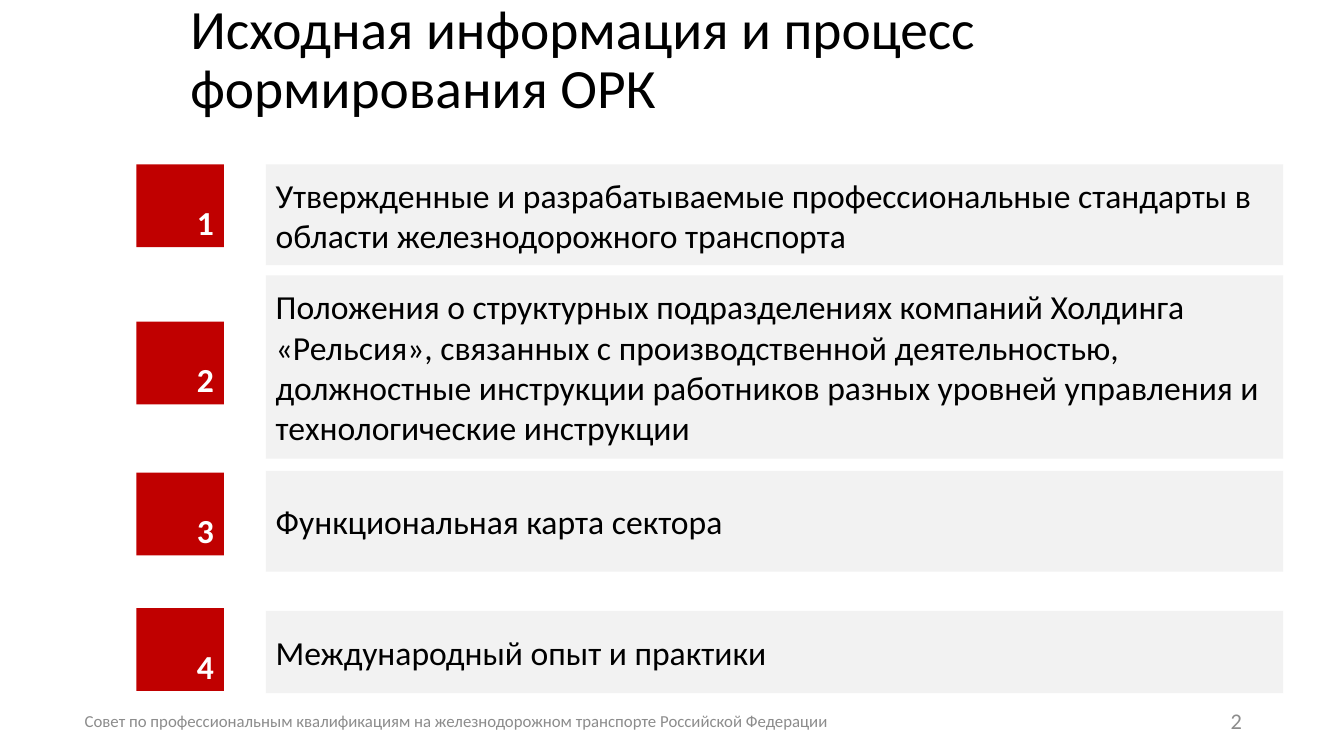
from pptx import Presentation
from pptx.dml.color import RGBColor
from pptx.enum.shapes import MSO_SHAPE
from pptx.enum.text import MSO_ANCHOR, PP_ALIGN
from pptx.util import Pt

RECTANGLE = MSO_SHAPE.RECTANGLE
MIDDLE, BOTTOM = MSO_ANCHOR.MIDDLE, MSO_ANCHOR.BOTTOM
LEFT, CENTER, RIGHT = PP_ALIGN.LEFT, PP_ALIGN.CENTER, PP_ALIGN.RIGHT

BLACK = RGBColor(0x00, 0x00, 0x00)
WHITE = RGBColor(0xFF, 0xFF, 0xFF)
RED = RGBColor(0xC0, 0x00, 0x00)
PANEL_GRAY = RGBColor(0xF2, 0xF2, 0xF2)
FOOTER_GRAY = RGBColor(0x8C, 0x8C, 0x8C)

FONT = "Calibri"
BADGE_WIDTH, BADGE_HEIGHT = 62.6, 59.2
PANEL_OFFSET = 92.5

SOURCES = [
    (117.4, 72, 0,
     "Утвержденные и разрабатываемые профессиональные стандарты в "
     "области железнодорожного транспорта"),
    (196.6, 131, 33.1,
     "Положения о структурных подразделениях компаний Холдинга "
     "«Рельсия», связанных с производственной деятельностью,\v"
     "должностные инструкции работников разных уровней управления и "
     "технологические инструкции"),
    (336.4, 72, 1.2, "Функциональная карта сектора"),
    (436.4, 58.8, -2, "Международный опыт и практики"),
]


def write_text(shape, text, size, color, align=LEFT, anchor=MIDDLE, bold=False):
    text_frame = shape.text_frame
    text_frame.text = text
    text_frame.word_wrap = True
    text_frame.vertical_anchor = anchor
    paragraph = text_frame.paragraphs[0]
    paragraph.alignment = align
    for run in paragraph.runs:
        run.font.name = FONT
        run.font.size = Pt(size)
        run.font.bold = bold
        run.font.color.rgb = color
    return paragraph


def add_label(slide, left, top, width, height, text, size, color, align=LEFT):
    box = slide.shapes.add_textbox(Pt(left), Pt(top), Pt(width), Pt(height))
    return write_text(box, text, size, color, align)


def add_block(slide, left, top, width, height, fill):
    block = slide.shapes.add_shape(RECTANGLE, Pt(left), Pt(top), Pt(width), Pt(height))
    block.shadow.inherit = False
    block.fill.solid()
    block.fill.fore_color.rgb = fill
    block.line.fill.background()
    return block


def add_title(slide, left, top, width, height):
    paragraph = add_label(slide, left, top, width, height,
                          "Исходная информация и процесс формирования ОРК", 39.6, BLACK)
    paragraph.line_spacing = 0.9


def add_source_row(slide, left, top, width, height, badge_shift, number, text):
    panel = add_block(slide, left + PANEL_OFFSET, top, width - PANEL_OFFSET, height, PANEL_GRAY)
    write_text(panel, text, 24, BLACK)
    badge = add_block(slide, left, top + badge_shift, BADGE_WIDTH, BADGE_HEIGHT, RED)
    write_text(badge, str(number), 24, WHITE, RIGHT, BOTTOM, True)


def add_footer(slide, left, top, width, height):
    add_label(slide, left, top, 630.7, height,
              "Совет по профессиональным квалификациям на железнодорожном транспорте "
              "Российской Федерации", 12, FOOTER_GRAY, CENTER)
    number_width = 216
    add_label(slide, left + width - number_width, top, number_width, height,
              "2", 16, FOOTER_GRAY, RIGHT)


def main():
    presentation = Presentation()
    presentation.slide_width = Pt(960)
    presentation.slide_height = Pt(540)
    slide = presentation.slides.add_slide(presentation.slide_layouts[6])
    add_title(slide, 128.9, 2.9, 828, 81.4)
    add_footer(slide, 10.8, 500.4, 883.4, 28.8)
    for number, (top, height, badge_shift, text) in enumerate(SOURCES, 1):
        add_source_row(slide, 97.4, top, 819.2, height, badge_shift, number, text)
    presentation.save("out.pptx")


if __name__ == "__main__":
    main()
